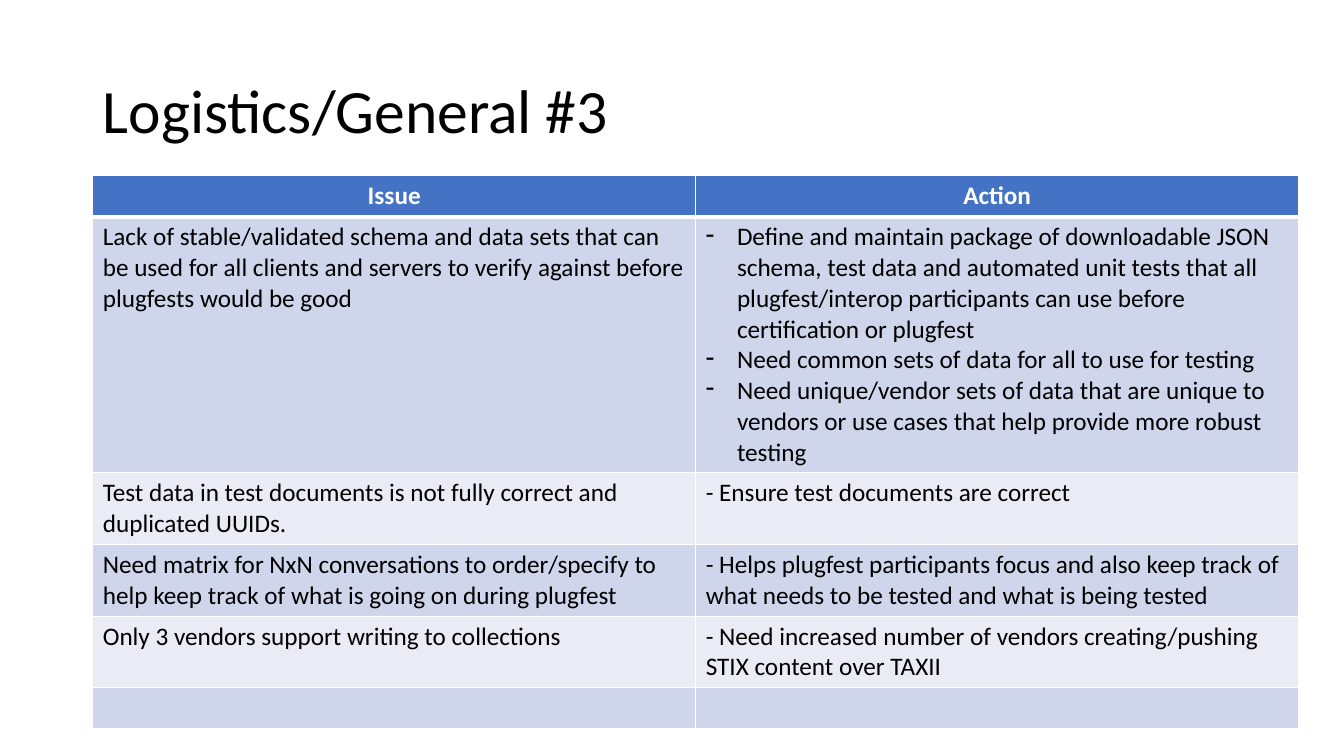
from lxml import etree
from pptx import Presentation
from pptx import util as u
from pptx.dml.color import RGBColor
from pptx.enum import text
from pptx.oxml.ns import qn

COLORS = {
    "text": "000000",
    "header": "4472C4",
    "odd": "CFD5EA",
    "even": "E9EBF5",
    "white": "FFFFFF",
}
FONT = "Calibri"
HEADERS = ["Issue", "Action"]
ISSUES = [
    (
        "Lack of stable/validated schema and data sets that can be used for all "
        "clients and servers to verify against before plugfests would be good",
        [
            "Define and maintain package of downloadable JSON schema, test data and "
            "automated unit tests that all plugfest/interop participants can use "
            "before certification or plugfest",
            "Need common sets of data for all to use for testing",
            "Need unique/vendor sets of data that are unique to vendors or use cases "
            "that help provide more robust testing",
        ],
    ),
    (
        "Test data in test documents is not fully correct and duplicated UUIDs.",
        "- Ensure test documents are correct",
    ),
    (
        "Need matrix for NxN conversations to order/specify to help keep track of "
        "what is going on during plugfest",
        "- Helps plugfest participants focus and also keep track of what needs to be "
        "tested and what is being tested",
    ),
    (
        "Only 3 vendors support writing to collections",
        "- Need increased number of vendors creating/pushing STIX content over TAXII",
    ),
    ("", ""),
]
ROW_HEIGHTS = [0.41, 2.52, 0.71, 0.71, 0.71, 0.41]


def color(name):
    return RGBColor.from_string(COLORS[name])


def add_run(para, words, size, color_name, bold=False):
    span = para.add_run()
    span.text = words
    span.font.name = FONT
    span.font.size = u.Pt(size)
    span.font.bold = bold
    span.font.color.rgb = color(color_name)


def add_dash(para):
    props = para._p.get_or_add_pPr()
    props.set("marL", str(u.Inches(0.31)))
    props.set("indent", str(-u.Inches(0.31)))
    etree.SubElement(props, qn("a:buFontTx"))
    etree.SubElement(props, qn("a:buChar")).set("char", "-")


def set_borders(cell, bottom):
    props = cell._tc.get_or_add_tcPr()
    for side, width in (("L", 1), ("R", 1), ("T", 1), ("B", bottom)):
        line = etree.SubElement(props, qn(f"a:ln{side}"), w=str(u.Pt(width)))
        fill = etree.SubElement(line, qn("a:solidFill"))
        etree.SubElement(fill, qn("a:srgbClr"), val=COLORS["white"])


def fill_cell(cell, content, fill_name, header=False):
    set_borders(cell, 3 if header else 1)
    cell.fill.solid()
    cell.fill.fore_color.rgb = color(fill_name)
    dashed = isinstance(content, list)
    frame = cell.text_frame
    for index, words in enumerate(content if dashed else [content]):
        para = frame.add_paragraph() if index else frame.paragraphs[0]
        if header:
            para.alignment = text.PP_ALIGN.CENTER
        if dashed:
            add_dash(para)
        if words:
            add_run(para, words, 18, "white" if header else "text", header)


def set_title(page, words):
    box = page.shapes.title
    box.left, box.top = u.Inches(0.92), u.Inches(0.4)
    box.width, box.height = u.Inches(11.5), u.Inches(1.45)
    box.text_frame.vertical_anchor = text.MSO_ANCHOR.MIDDLE
    para = box.text_frame.paragraphs[0]
    para.alignment = text.PP_ALIGN.LEFT
    para.line_spacing = 0.9
    add_run(para, words, 44, "text")


def add_issue_table(page):
    rows = [HEADERS, *ISSUES]
    table = page.shapes.add_table(
        len(rows), len(HEADERS),
        u.Inches(0.92), u.Inches(1.74), u.Inches(11.96), u.Inches(sum(ROW_HEIGHTS)),
    ).table
    for row_index, (contents, height) in enumerate(zip(rows, ROW_HEIGHTS)):
        table.rows[row_index].height = u.Inches(height)
        header = row_index == 0
        fill_name = "header" if header else "odd" if row_index % 2 else "even"
        for column_index, content in enumerate(contents):
            fill_cell(table.cell(row_index, column_index), content, fill_name, header)


def main():
    deck = Presentation()
    deck.slide_width, deck.slide_height = u.Inches(13.33), u.Inches(7.5)
    page = deck.slides.add_slide(deck.slide_layouts[5])
    set_title(page, "Logistics/General #3")
    add_issue_table(page)
    deck.save("out.pptx")


if __name__ == "__main__":
    main()
